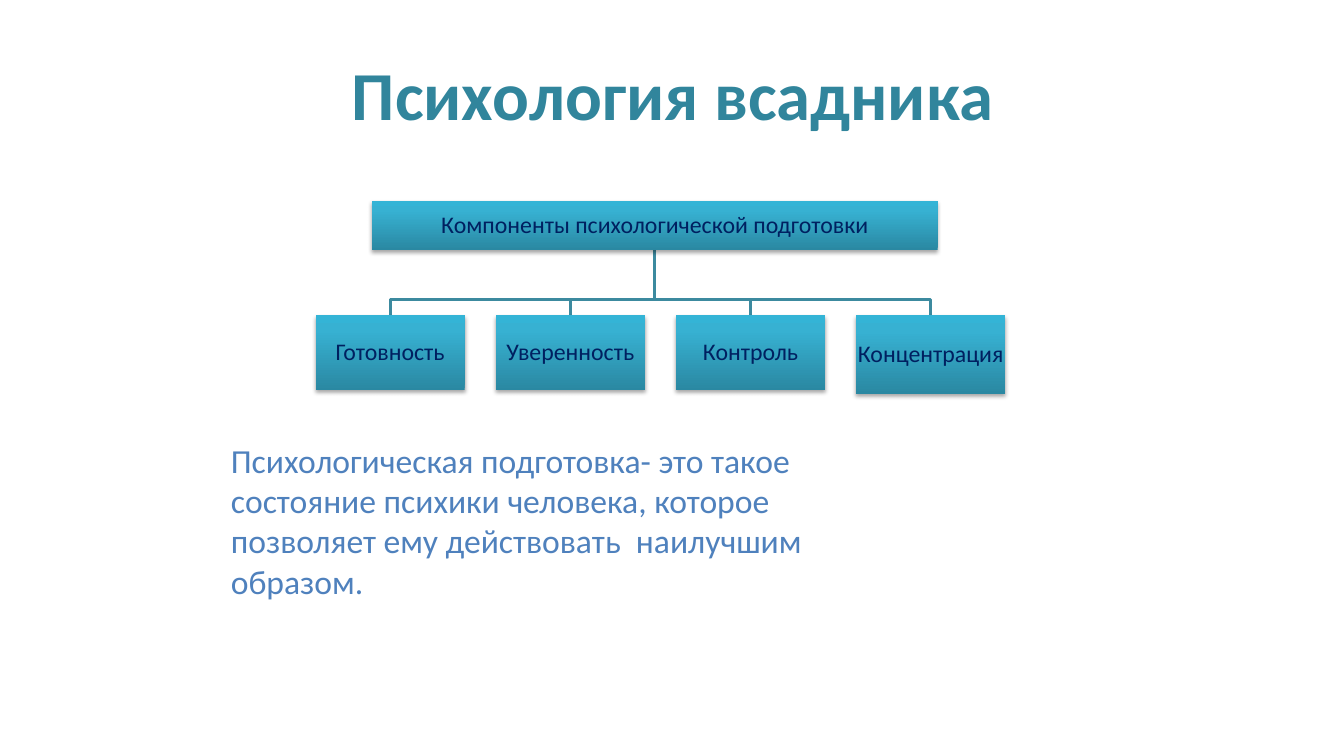
"""Builds a slide on the psychology of a rider with a small component tree."""
from lxml import etree
from pptx import Presentation
from pptx.dml.color import RGBColor
from pptx.enum.shapes import MSO_SHAPE
from pptx.enum.text import MSO_ANCHOR, PP_ALIGN
from pptx.oxml.ns import qn
from pptx.util import Inches, Pt

RECT = MSO_SHAPE.RECTANGLE
TOP, MIDDLE = MSO_ANCHOR.TOP, MSO_ANCHOR.MIDDLE
LEFT, CENTER = PP_ALIGN.LEFT, PP_ALIGN.CENTER

TITLE = "Психология всадника"
ROOT = "Компоненты психологической подготовки"
COMPONENTS = [("Готовность", 0.74), ("Уверенность", 0.74),
              ("Контроль", 0.74), ("Концентрация", 0.78)]
DEFINITION = ("Психологическая подготовка- это такое состояние психики человека, "
              "которое позволяет ему действовать  наилучшим образом.")

FONT = "Calibri"
COLORS = {"title": "31859C", "body": "4F81BD", "node": "002060", "line": "3C8A9F",
          "shadow": "000000"}
GRADIENT = [(0, "2A88A2"), (80, "37B1D2"), (100, "34B4D6")]

ROOT_BOX = (3.69, 1.99, 5.61, 0.49)
NODE_LEFT, NODE_TOP, NODE_W, NODE_STEP = 3.13, 3.13, 1.48, 1.787
BUS_Y = 2.97


def write(s, text, size, color, bold=False, align=CENTER, anchor=MIDDLE,
          inset=(0.11, 0.06), spacing=1.0):
    """Fill a shape with one formatted paragraph."""
    tf = s.text_frame
    tf.word_wrap = True
    tf.vertical_anchor = anchor
    tf.margin_left = tf.margin_right = Inches(inset[0])
    tf.margin_top = tf.margin_bottom = Inches(inset[1])
    p = tf.paragraphs[0]
    p.alignment = align
    p.line_spacing = spacing
    r = p.add_run()
    r.text = text
    r.font.name = FONT
    r.font.size = Pt(size)
    r.font.bold = bold
    r.font.color.rgb = RGBColor.from_string(color)


def add_color(parent, color):
    """Append a colour element to an XML parent."""
    return etree.SubElement(parent, qn("a:srgbClr"), val=color)


def add_node(shapes, box, text):
    """Add a gradient box with a soft shadow and a label."""
    s = shapes.add_shape(RECT, *map(Inches, box))
    s.line.fill.background()
    s.fill.gradient()
    s.fill.gradient_angle = 90
    stops = s._element.spPr.find(".//" + qn("a:gsLst"))
    for stop in list(stops):
        stops.remove(stop)
    for pos, color in GRADIENT:
        add_color(etree.SubElement(stops, qn("a:gs"), pos=str(pos * 1000)), color)
    s.shadow.inherit = False
    effects = s._element.spPr.find(qn("a:effectLst"))
    shadow = etree.SubElement(effects, qn("a:outerShdw"), blurRad=str(Pt(3.1)),
                              dist=str(Pt(1.8)), dir="5400000", rotWithShape="0")
    etree.SubElement(add_color(shadow, COLORS["shadow"]), qn("a:alpha"), val="35000")
    write(s, text, 17, COLORS["node"], inset=(0.01, 0.01), spacing=0.9)


def add_branch(shapes, points):
    """Draw an open bent line through the points."""
    start, *rest = [(Inches(x), Inches(y)) for x, y in points]
    builder = shapes.build_freeform(*start)
    builder.add_line_segments(rest, close=False)
    s = builder.convert_to_shape()
    s.fill.background()
    s.line.color.rgb = RGBColor.from_string(COLORS["line"])
    s.line.width = Pt(2)
    s.shadow.inherit = False


def main():
    """Assemble and save the slide."""
    prs = Presentation()
    prs.slide_width, prs.slide_height = Inches(13.33), Inches(7.5)
    slide = prs.slides.add_slide(prs.slide_layouts[5])
    shapes = slide.shapes

    title = shapes.title
    title.left, title.top, title.width, title.height = map(Inches, (0.67, 0.3, 12, 1.25))
    write(title, TITLE, 49, COLORS["title"], bold=True)

    body = shapes.add_textbox(*map(Inches, (2.18, 4.3, 5.91, 1.73)))
    write(body, DEFINITION, 24, COLORS["body"], align=LEFT, anchor=TOP)

    left, top, width, height = ROOT_BOX
    root_x, root_bottom = left + width / 2, top + height
    lefts = [NODE_LEFT + i * NODE_STEP for i in range(len(COMPONENTS))]
    for x in lefts:
        node_x = x + NODE_W / 2
        add_branch(shapes, [(root_x, root_bottom), (root_x, BUS_Y),
                            (node_x, BUS_Y), (node_x, NODE_TOP)])
    add_node(shapes, ROOT_BOX, ROOT)
    for x, (name, node_h) in zip(lefts, COMPONENTS):
        add_node(shapes, (x, NODE_TOP, NODE_W, node_h), name)

    prs.save("out.pptx")


if __name__ == "__main__":
    main()
